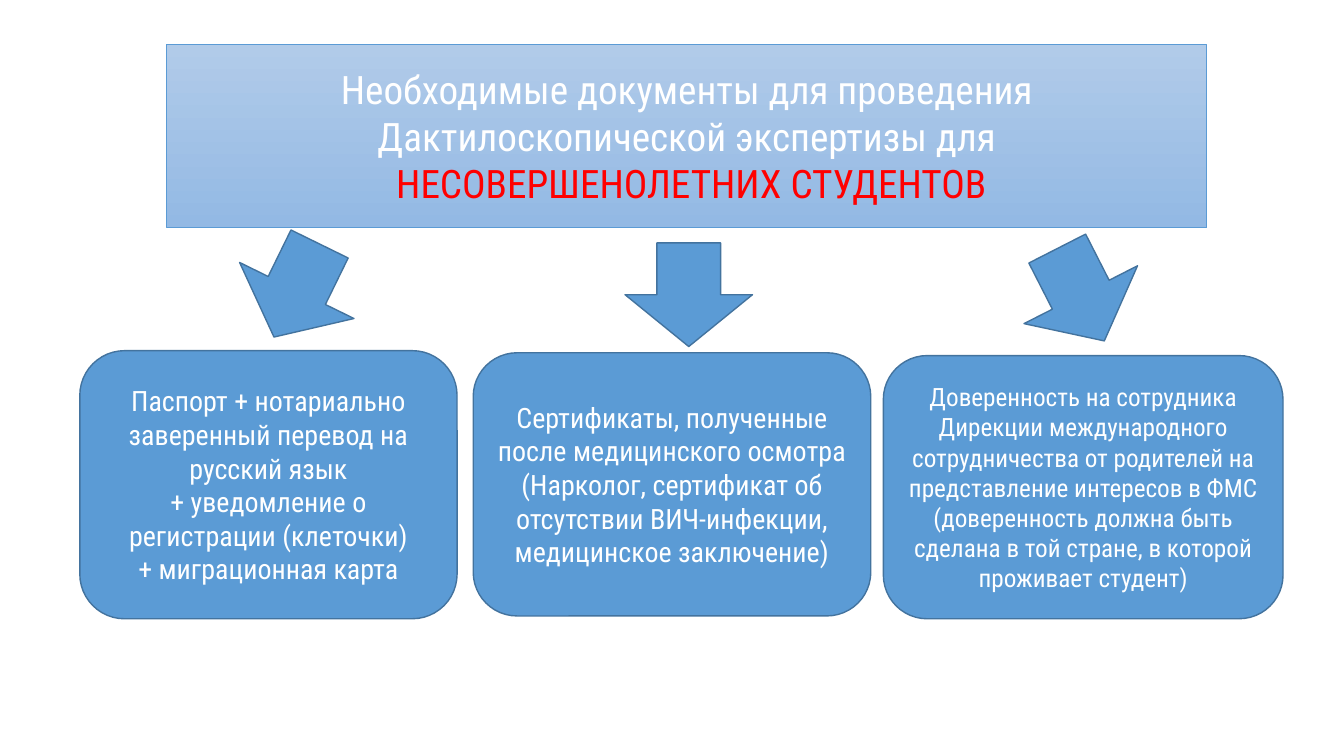
from pptx import Presentation
from pptx.dml.color import RGBColor
from pptx.enum.shapes import MSO_SHAPE
from pptx.enum.text import MSO_ANCHOR, MSO_AUTO_SIZE, PP_ALIGN
from pptx.util import Pt

ROUNDED = MSO_SHAPE.ROUNDED_RECTANGLE
DOWN_ARROW = MSO_SHAPE.DOWN_ARROW
MIDDLE = MSO_ANCHOR.MIDDLE
NO_AUTOFIT = MSO_AUTO_SIZE.NONE
CENTER = PP_ALIGN.CENTER

FONT = "Roboto Condensed"
WHITE = RGBColor(0xFF, 0xFF, 0xFF)
RED = RGBColor(0xFF, 0x00, 0x00)
BLUE = RGBColor(0x5B, 0x9B, 0xD5)
DARK_BLUE = RGBColor(0x43, 0x73, 0x9E)
GRADIENT_TOP = RGBColor(0xB1, 0xCB, 0xE9)
GRADIENT_BOTTOM = RGBColor(0x93, 0xB9, 0xE4)


def add_blue_shape(kind, left, top, width, height):
    shape = slide.shapes.add_shape(kind, Pt(left), Pt(top), Pt(width), Pt(height))
    shape.shadow.inherit = False
    shape.fill.solid()
    shape.fill.fore_color.rgb = BLUE
    shape.line.color.rgb = DARK_BLUE
    shape.line.width = Pt(1)
    return shape


def write_lines(frame, lines, size):
    frame.text = "\n".join(lines)
    frame.word_wrap = True
    frame.auto_size = NO_AUTOFIT
    frame.vertical_anchor = MIDDLE
    for paragraph in frame.paragraphs:
        paragraph.alignment = CENTER
        for run in paragraph.runs:
            run.font.name = FONT
            run.font.size = Pt(size)
            run.font.color.rgb = WHITE


prs = Presentation()
prs.slide_width = Pt(960)
prs.slide_height = Pt(540)
slide = prs.slides.add_slide(prs.slide_layouts[5])

heading = slide.shapes.title
heading.left, heading.top = Pt(119), Pt(31.7)
heading.width, heading.height = Pt(743), Pt(131)
heading.fill.gradient()
heading.fill.gradient_angle = 270
for stop, color in zip(heading.fill.gradient_stops, (GRADIENT_TOP, GRADIENT_BOTTOM)):
    stop.color.rgb = color
heading.line.color.rgb = BLUE
heading.line.width = Pt(0.5)
write_lines(
    heading.text_frame,
    [
        "Необходимые документы для проведения Дактилоскопической экспертизы для",
        " НЕСОВЕРШЕНОЛЕТНИХ СТУДЕНТОВ",
    ],
    28,
)
heading.text_frame.paragraphs[1].runs[0].font.color.rgb = RED

documents = [
    (57, 250.5, 269.5, 191.5, 20, [
        "Паспорт + нотариально заверенный перевод на русский язык",
        "+ уведомление о регистрации (клеточки)",
        "+ миграционная карта",
    ]),
    (338, 252, 284, 188, 20, [
        "Сертификаты, полученные после медицинского осмотра (Нарколог, "
        "сертификат об отсутствии ВИЧ-инфекции, медицинское заключение)",
    ]),
    (631, 254, 285.5, 188, 18, [
        "Доверенность на сотрудника Дирекции международного сотрудничества "
        "от родителей на представление интересов в ФМС",
        "(доверенность должна быть сделана в той стране, в которой проживает студент)",
    ]),
]
for left, top, width, height, size, lines in documents:
    card = add_blue_shape(ROUNDED, left, top, width, height)
    write_lines(card.text_frame, lines, size)

for left, top, rotation in [(166.5, 170.5, 26.1), (446.5, 173.5, 0), (726.5, 173.5, 333)]:
    arrow = add_blue_shape(DOWN_ARROW, left, top, 91, 74)
    arrow.rotation = rotation

prs.save("out.pptx")
